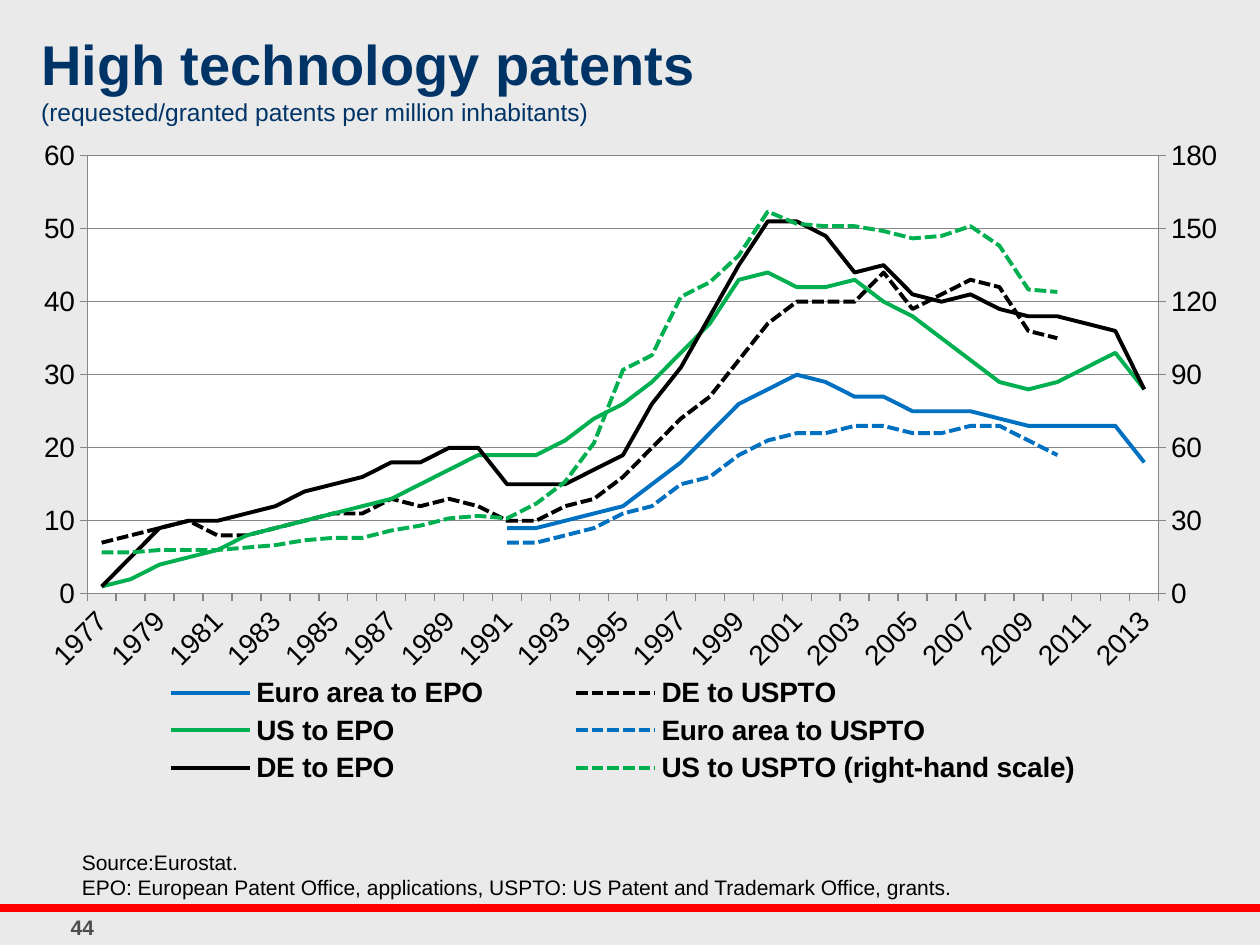
import copy
from dataclasses import dataclass

import lxml.etree
import pptx
import pptx.chart.axis
import pptx.chart.data
import pptx.dml.color
import pptx.enum.chart
import pptx.enum.dml
import pptx.enum.shapes
import pptx.enum.text
import pptx.oxml
import pptx.oxml.ns
import pptx.util

Cm, Pt = pptx.util.Cm, pptx.util.Pt
qn = pptx.oxml.ns.qn
ALIGN = pptx.enum.text.PP_ALIGN
ANCHOR = pptx.enum.text.MSO_ANCHOR


@dataclass(frozen=True)
class Theme:
    font: str = "Arial"
    background: str = "EAEAEA"
    plot: str = "FFFFFF"
    title: str = "003366"
    text: str = "000000"
    number: str = "4D4D4D"
    rule: str = "FF0000"
    grid: str = "868686"
    euro_area: str = "0070C0"
    us: str = "00B050"
    germany: str = "000000"
    title_size: float = 32
    subtitle_size: float = 14
    note_size: float = 12
    chart_size: float = 16


THEME = Theme()
YEARS = [str(year) for year in range(1977, 2014)]
EARLY_GAP, LATE_GAP = [None] * 14, [None] * 3

# name, colour, dashed, values
SERIES = [
    ("Euro area to EPO", THEME.euro_area, False,
     EARLY_GAP + [9, 9, 10, 11, 12, 15, 18, 22, 26, 28, 30, 29, 27, 27, 25, 25, 25, 24,
                  23, 23, 23, 23, 18]),
    ("DE to USPTO", THEME.germany, True,
     [7, 8, 9, 10, 8, 8, 9, 10, 11, 11, 13, 12, 13, 12, 10, 10, 12, 13, 16, 20, 24, 27,
      32, 37, 40, 40, 40, 44, 39, 41, 43, 42, 36, 35] + LATE_GAP),
    ("US to EPO", THEME.us, False,
     [1, 2, 4, 5, 6, 8, 9, 10, 11, 12, 13, 15, 17, 19, 19, 19, 21, 24, 26, 29, 33, 37,
      43, 44, 42, 42, 43, 40, 38, 35, 32, 29, 28, 29, 31, 33, 28]),
    ("Euro area to USPTO", THEME.euro_area, True,
     EARLY_GAP + [7, 7, 8, 9, 11, 12, 15, 16, 19, 21, 22, 22, 23, 23, 22, 22, 23, 23,
                  21, 19] + LATE_GAP),
    ("DE to EPO", THEME.germany, False,
     [1, 5, 9, 10, 10, 11, 12, 14, 15, 16, 18, 18, 20, 20, 15, 15, 15, 17, 19, 26, 31,
      38, 45, 51, 51, 49, 44, 45, 41, 40, 41, 39, 38, 38, 37, 36, 28]),
    ("US to USPTO (right-hand scale)", THEME.us, True,
     [17, 17, 18, 18, 18, 19, 20, 22, 23, 23, 26, 28, 31, 32, 31, 37, 46, 62, 92, 98,
      122, 128, 139, 157, 152, 151, 151, 149, 146, 147, 151, 143, 125, 124] + LATE_GAP),
]


def rgb(color):
    return pptx.dml.color.RGBColor.from_string(color)


def set_font(font, size, color=THEME.text, bold=False):
    font.name, font.size, font.bold = THEME.font, Pt(size), bold
    font.color.rgb = rgb(color)


def add_run(paragraph, text, **style):
    run = paragraph.add_run()
    run.text = text
    set_font(run.font, **style)


def add_text(slide, box, text, align=ALIGN.LEFT, anchor=ANCHOR.TOP, **style):
    """Add a text box with one paragraph for each line of text."""
    shape = slide.shapes.add_textbox(*map(Cm, box))
    frame = shape.text_frame
    frame.word_wrap, frame.vertical_anchor = True, anchor
    for index, line in enumerate(text.split("\n")):
        paragraph = frame.add_paragraph() if index else frame.paragraphs[0]
        paragraph.alignment = align
        add_run(paragraph, line, **style)
    return shape


def add_title(slide, box):
    shape = add_text(slide, box, "High technology patents",
                     size=THEME.title_size, color=THEME.title, bold=True)
    paragraph = shape.text_frame.paragraphs[0]
    paragraph.add_line_break()
    add_run(paragraph, "(requested/granted patents per million inhabitants)",
            size=THEME.subtitle_size, color=THEME.title)


def set_layout(parent, index, inner=False, **fractions):
    """Fix the place of a plot area or legend within the chart."""
    for old in parent.findall(qn("c:layout")):
        parent.remove(old)
    layout = lxml.etree.Element(qn("c:layout"))
    manual = lxml.etree.SubElement(layout, qn("c:manualLayout"))
    values = {"layoutTarget": "inner"} if inner else {}
    values.update(xMode="edge", yMode="edge", **fractions)
    for name, value in values.items():
        lxml.etree.SubElement(manual, qn("c:" + name), val=str(value))
    parent.insert(index, layout)


def style_axis(axis):
    set_font(axis.tick_labels.font, THEME.chart_size)
    axis.format.line.color.rgb = rgb(THEME.grid)
    axis.major_tick_mark = pptx.enum.chart.XL_TICK_MARK.OUTSIDE
    axis.minor_tick_mark = pptx.enum.chart.XL_TICK_MARK.NONE


def set_scale(axis, maximum, step):
    axis.minimum_scale, axis.maximum_scale, axis.major_unit = 0, maximum, step


def style_axes(chart):
    category, value = chart.category_axis, chart.value_axis
    style_axis(category)
    style_axis(value)
    set_scale(value, 60, 10)
    value.has_major_gridlines = True
    value.major_gridlines.format.line.color.rgb = rgb(THEME.grid)
    value.tick_labels.number_format = "0"
    value.tick_labels.number_format_is_linked = False

    # Slanted label for every second year
    element = category._element
    element.find(qn("c:txPr")).find(qn("a:bodyPr")).set("rot", "-2700000")
    last = element.find(qn("c:noMultiLvlLbl"))
    for name, step in (("tickLblSkip", "2"), ("tickMarkSkip", "1")):
        skip = lxml.etree.Element(qn("c:" + name), val=step)
        if last is None:
            element.append(skip)
        else:
            last.addprevious(skip)

    # Points stand between the tick marks
    between = value._element.find(qn("c:crossBetween"))
    if between is None:
        between = lxml.etree.Element(qn("c:crossBetween"))
        value._element.find(qn("c:crosses")).addnext(between)
    between.set("val", "between")


def move_last_series_to_right_axis(chart):
    left_plot = chart.plots[0]._element
    right_plot = copy.deepcopy(left_plot)
    for series in right_plot.findall(qn("c:ser"))[:-1]:
        right_plot.remove(series)
    left_plot.remove(left_plot.findall(qn("c:ser"))[-1])
    left_plot.addnext(right_plot)

    left_category, left_value = chart.category_axis._element, chart.value_axis._element
    category, value = copy.deepcopy(left_category), copy.deepcopy(left_value)
    left_value.addnext(value)
    value.addnext(category)
    new_ids = {left_category.find(qn("c:axId")).get("val"): "5001",
               left_value.find(qn("c:axId")).get("val"): "5002"}
    for parent in (right_plot, category, value):
        for name in ("c:axId", "c:crossAx"):
            for reference in parent.findall(qn(name)):
                reference.set("val", new_ids[reference.get("val")])

    right_axis = pptx.chart.axis.ValueAxis(value)
    right_axis.has_major_gridlines = False
    set_scale(right_axis, 180, 30)
    right_axis.tick_label_position = pptx.enum.chart.XL_TICK_LABEL_POSITION.HIGH
    value.find(qn("c:axPos")).set("val", "r")
    value.find(qn("c:crosses")).set("val", "max")
    category.find(qn("c:delete")).set("val", "1")


def add_patent_chart(slide, box):
    data = pptx.chart.data.CategoryChartData(number_format="0")
    data.categories = YEARS
    for name, _, _, values in SERIES:
        data.add_series(name, values)
    chart = slide.shapes.add_chart(
        pptx.enum.chart.XL_CHART_TYPE.LINE, *map(Cm, box), data).chart
    chart.has_title = False
    set_font(chart.font, THEME.note_size)
    chart.plots[0].vary_by_categories = False

    for series, (_, color, dashed, _) in zip(chart.plots[0].series, SERIES):
        series.smooth = False
        series.format.line.width = Pt(2.25)
        series.format.line.color.rgb = rgb(color)
        if dashed:
            series.format.line.dash_style = pptx.enum.dml.MSO_LINE.SQUARE_DOT

    style_axes(chart)
    move_last_series_to_right_axis(chart)

    # White plot area
    plot_area = chart.plots[0]._element.getparent()
    set_layout(plot_area, 0, inner=True, x=0.045, y=0.031, w=0.885, h=0.655)
    plot_area.append(pptx.oxml.parse_xml(
        f'<c:spPr {pptx.oxml.ns.nsdecls("c", "a")}><a:solidFill>'
        f'<a:srgbClr val="{THEME.plot}"/></a:solidFill></c:spPr>'))

    # Legend in two columns
    chart.has_legend = True
    chart.legend.position = pptx.enum.chart.XL_LEGEND_POSITION.BOTTOM
    chart.legend.include_in_layout = False
    set_font(chart.legend.font, THEME.chart_size, bold=True)
    set_layout(chart.legend._element, 1, x=0.045, y=0.8, w=0.885, h=0.18)


def add_footer(slide, left, top, width, height):
    line = slide.shapes.add_connector(
        pptx.enum.shapes.MSO_CONNECTOR.STRAIGHT,
        Cm(left), Cm(top), Cm(left + width), Cm(top))
    line.line.color.rgb, line.line.width = rgb(THEME.rule), Pt(4.5)
    lxml.etree.SubElement(line._element.spPr, qn("a:effectLst"))
    add_text(slide, (left + 0.54, top + 0.02, 2.24, height), "44", align=ALIGN.CENTER,
             anchor=ANCHOR.MIDDLE, size=THEME.note_size, color=THEME.number, bold=True)


def main():
    presentation = pptx.Presentation()
    presentation.slide_width, presentation.slide_height = Cm(25.4), Cm(19.05)
    slide = presentation.slides.add_slide(presentation.slide_layouts[6])
    slide.background.fill.solid()
    slide.background.fill.fore_color.rgb = rgb(THEME.background)

    add_footer(slide, 0, 18.31, 25.4, 0.74)
    add_title(slide, (0.58, 0.48, 22.45, 3.18))
    add_text(slide, (1.4, 16.99, 19.99, 1.27),
             "Source:Eurostat.\nEPO: European Patent Office, applications, "
             "USPTO: US Patent and Trademark Office, grants.",
             anchor=ANCHOR.BOTTOM, size=THEME.note_size)
    add_patent_chart(slide, (0.66, 2.72, 24.41, 13.49))
    presentation.save("out.pptx")


if __name__ == "__main__":
    main()
